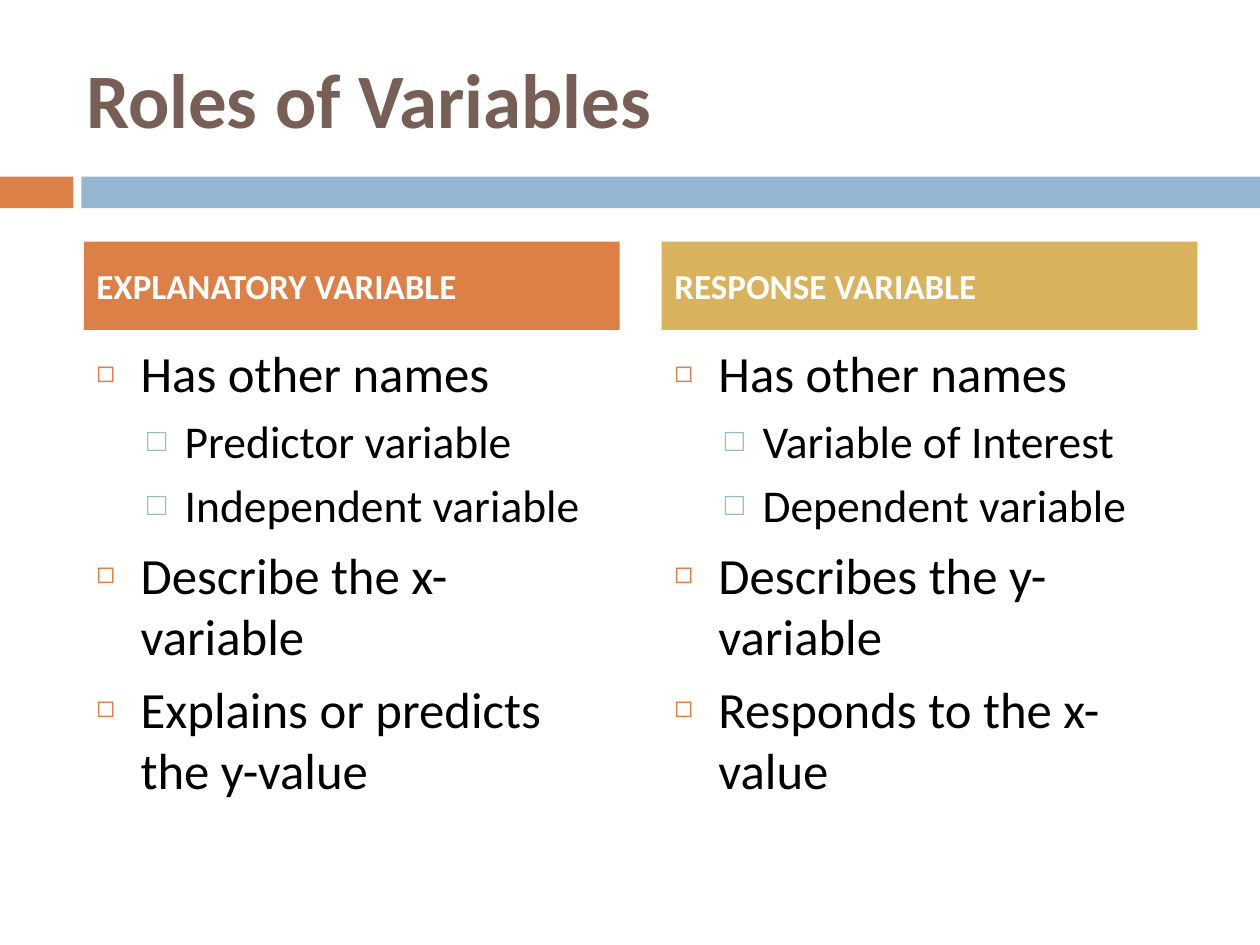
from typing import NamedTuple

from lxml.etree import SubElement
from pptx import Presentation
from pptx.dml.color import RGBColor
from pptx.enum.shapes import MSO_SHAPE
from pptx.enum.text import MSO_ANCHOR, MSO_AUTO_SIZE, PP_ALIGN
from pptx.oxml.ns import qn
from pptx.util import Cm, Pt

ORANGE = RGBColor(0xDD, 0x80, 0x47)
BLUE = RGBColor(0x94, 0xB6, 0xD2)
GOLD = RGBColor(0xD8, 0xB2, 0x5C)
BROWN = RGBColor(0x77, 0x5F, 0x55)
BLACK = RGBColor(0, 0, 0)
WHITE = RGBColor(0xFF, 0xFF, 0xFF)

COMPARISON_LAYOUT = 5 - 1
COLUMN_WIDTH = 10.8


class Box(NamedTuple):
    left: float
    top: float
    width: float
    height: float


class Bullet(NamedTuple):
    character: str
    color: RGBColor
    percent: int
    indent: float
    hanging: float
    size: float
    space_before: float


class Column(NamedTuple):
    left: float
    heading: str
    fill: RGBColor
    heading_index: int
    list_index: int
    items: list[tuple[int, str]]


BULLETS = [
    Bullet("◻", ORANGE, 60, 0.89, 0.89, 29, 7),
    Bullet("□", BLUE, 70, 1.78, 0.76, 26, 5.5),
]

COLUMNS = [
    Column(1.69, "EXPLANATORY VARIABLE", ORANGE, 1, 2, [
        (0, "Has other names"),
        (1, "Predictor variable"),
        (1, "Independent variable"),
        (0, "Describe the x-variable"),
        (0, "Explains or predicts the y-value"),
    ]),
    Column(13.34, "RESPONSE VARIABLE", GOLD, 3, 4, [
        (0, "Has other names"),
        (1, "Variable of Interest"),
        (1, "Dependent variable"),
        (0, "Describes the y-variable"),
        (0, "Responds to the x-value"),
    ]),
]


def place(shape, box: Box) -> None:
    for name, value in box._asdict().items():
        setattr(shape, name, Cm(value))


def set_frame(shape, anchor: MSO_ANCHOR) -> None:
    settings = {"word_wrap": True, "auto_size": MSO_AUTO_SIZE.NONE,
                "vertical_anchor": anchor}
    for name, value in settings.items():
        setattr(shape.text_frame, name, value)


def write(paragraph, text: str, size: float, color: RGBColor,
          bold: bool = False, space_before: float = 0) -> None:
    paragraph.alignment = PP_ALIGN.LEFT
    paragraph.space_before = Pt(space_before)
    run = paragraph.add_run()
    run.text = text
    for name, value in {"name": "Calibri", "size": Pt(size), "bold": bold}.items():
        setattr(run.font, name, value)
    run.font.color.rgb = color


def add_bullet(paragraph, bullet: Bullet) -> None:
    properties = paragraph._p.get_or_add_pPr()
    properties.set("marL", str(Cm(bullet.indent)))
    properties.set("indent", str(-Cm(bullet.hanging)))
    color = SubElement(properties, qn("a:buClr"))
    SubElement(color, qn("a:srgbClr"), val=str(bullet.color))
    SubElement(properties, qn("a:buSzPct"), val=str(bullet.percent * 1000))
    SubElement(properties, qn("a:buChar"), char=bullet.character)


def add_band(slide, box: Box, color: RGBColor) -> None:
    band = slide.shapes.add_shape(MSO_SHAPE.RECTANGLE, *map(Cm, box))
    band.shadow.inherit = False
    band.fill.solid()
    band.fill.fore_color.rgb = color
    band.line.fill.background()


def fill_column(slide, column: Column) -> None:
    placeholders = slide.placeholders

    # Coloured heading
    heading = placeholders[column.heading_index]
    place(heading, Box(column.left, 4.87, COLUMN_WIDTH, 1.78))
    set_frame(heading, MSO_ANCHOR.MIDDLE)
    heading.fill.solid()
    heading.fill.fore_color.rgb = column.fill
    write(heading.text_frame.paragraphs[0], column.heading, 20, WHITE, True, 7)

    # Two-level list
    body = placeholders[column.list_index]
    place(body, Box(column.left, 6.77, COLUMN_WIDTH, 9.95))
    set_frame(body, MSO_ANCHOR.TOP)
    frame = body.text_frame
    for number, (level, text) in enumerate(column.items):
        paragraph = frame.add_paragraph() if number else frame.paragraphs[0]
        paragraph.level = level
        bullet = BULLETS[level]
        write(paragraph, text, bullet.size, BLACK, space_before=bullet.space_before)
        add_bullet(paragraph, bullet)


def main() -> None:
    presentation = Presentation()
    presentation.slide_width, presentation.slide_height = Cm(25.4), Cm(19.05)
    slide = presentation.slides.add_slide(presentation.slide_layouts[COMPARISON_LAYOUT])

    # Bands under the title
    add_band(slide, Box(0, 3.56, 1.48, 0.64), ORANGE)
    add_band(slide, Box(1.64, 3.56, 23.76, 0.64), BLUE)

    # Title
    title = slide.shapes.title
    place(title, Box(1.48, 0.76, 22.65, 2.41))
    set_frame(title, MSO_ANCHOR.MIDDLE)
    write(title.text_frame.paragraphs[0], "Roles of Variables", 44, BROWN, True)

    for column in COLUMNS:
        fill_column(slide, column)

    presentation.save("out.pptx")


if __name__ == "__main__":
    main()
